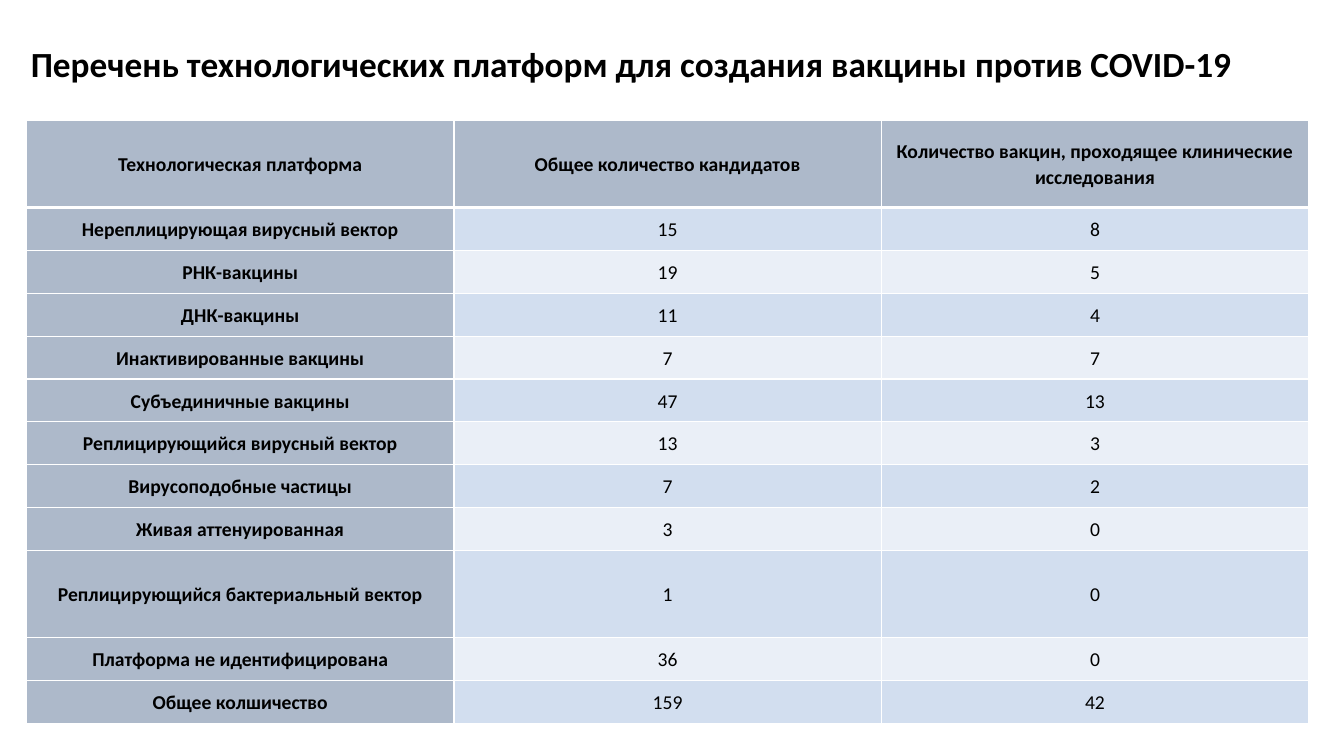
from lxml.etree import SubElement
from pptx import Presentation
from pptx.dml.color import RGBColor
from pptx.enum.text import MSO_ANCHOR, PP_ALIGN
from pptx.oxml.ns import qn
from pptx.util import Cm, Pt


def rgb(value):
    return RGBColor.from_string(value)


def add_border(cell, side, width):
    ln = SubElement(cell._tc.get_or_add_tcPr(), qn(f"a:{side}"), w=str(Pt(width)))
    fill = SubElement(ln, qn("a:solidFill"))
    SubElement(fill, qn("a:srgbClr"), val="FFFFFF")


prs = Presentation()
prs.slide_width, prs.slide_height = Cm(33.87), Cm(19.05)
s = prs.slides.add_slide(prs.slide_layouts[6])

# Title
sp = s.shapes.add_textbox(Cm(0.28), Cm(1.02), Cm(31.27), Cm(1.27))
tf = sp.text_frame
tf.word_wrap = True
tf.vertical_anchor = MSO_ANCHOR.MIDDLE
p = tf.paragraphs[0]
p.text = "Перечень технологических платформ для создания вакцины против COVID-19"
p.alignment = PP_ALIGN.CENTER
p.line_spacing = 0.9
p.font.name, p.font.size, p.font.bold = "Calibri", Pt(25.2), True
p.font.color.rgb = rgb("000000")

# Table data
rows = [
    ("Технологическая платформа", "Общее количество кандидатов",
     "Количество вакцин, проходящее клинические исследования"),
    ("Нереплицирующая вирусный вектор", 15, 8),
    ("РНК-вакцины", 19, 5),
    ("ДНК-вакцины", 11, 4),
    ("Инактивированные вакцины", 7, 7),
    ("Субъединичные вакцины", 47, 13),
    ("Реплицирующийся вирусный вектор", 13, 3),
    ("Вирусоподобные частицы", 7, 2),
    ("Живая аттенуированная", 3, 0),
    ("Реплицирующийся бактериальный вектор", 1, 0),
    ("Платформа не идентифицирована", 36, 0),
    ("Общее колшичество", 159, 42),
]
tall_rows = (0, 9)

# Table grid
table = s.shapes.add_table(len(rows), 3, Cm(0.67), Cm(3.03), Cm(32.31), Cm(15.2)).table
table.first_row = table.horz_banding = False
for column in table.columns:
    column.width = Cm(10.77)

# Cells: headings in grey-blue, numbers in alternating bands
for i, values in enumerate(rows):
    table.rows[i].height = Cm(2.2 if i in tall_rows else 1.08)
    for j, value in enumerate(values):
        cell = table.cell(i, j)
        heading = i == 0 or j == 0
        add_border(cell, "lnL", 1)
        add_border(cell, "lnR", 1)
        add_border(cell, "lnT", 3 if i == 1 else 1)
        add_border(cell, "lnB", 3 if i == 0 else 1)
        cell.fill.solid()
        cell.fill.fore_color.rgb = rgb("ADB9CA" if heading else "D2DEEF" if i % 2 else "EAEFF7")
        cell.margin_left = cell.margin_right = Cm(0.18)
        cell.margin_top = cell.margin_bottom = Cm(0)
        cell.vertical_anchor = MSO_ANCHOR.MIDDLE
        p = cell.text_frame.paragraphs[0]
        p.text = str(value)
        p.alignment = PP_ALIGN.CENTER
        p.line_spacing = 1.07
        p.font.name, p.font.size, p.font.bold = "Calibri", Pt(14), heading
        p.font.color.rgb = rgb("000000")

prs.save("out.pptx")
